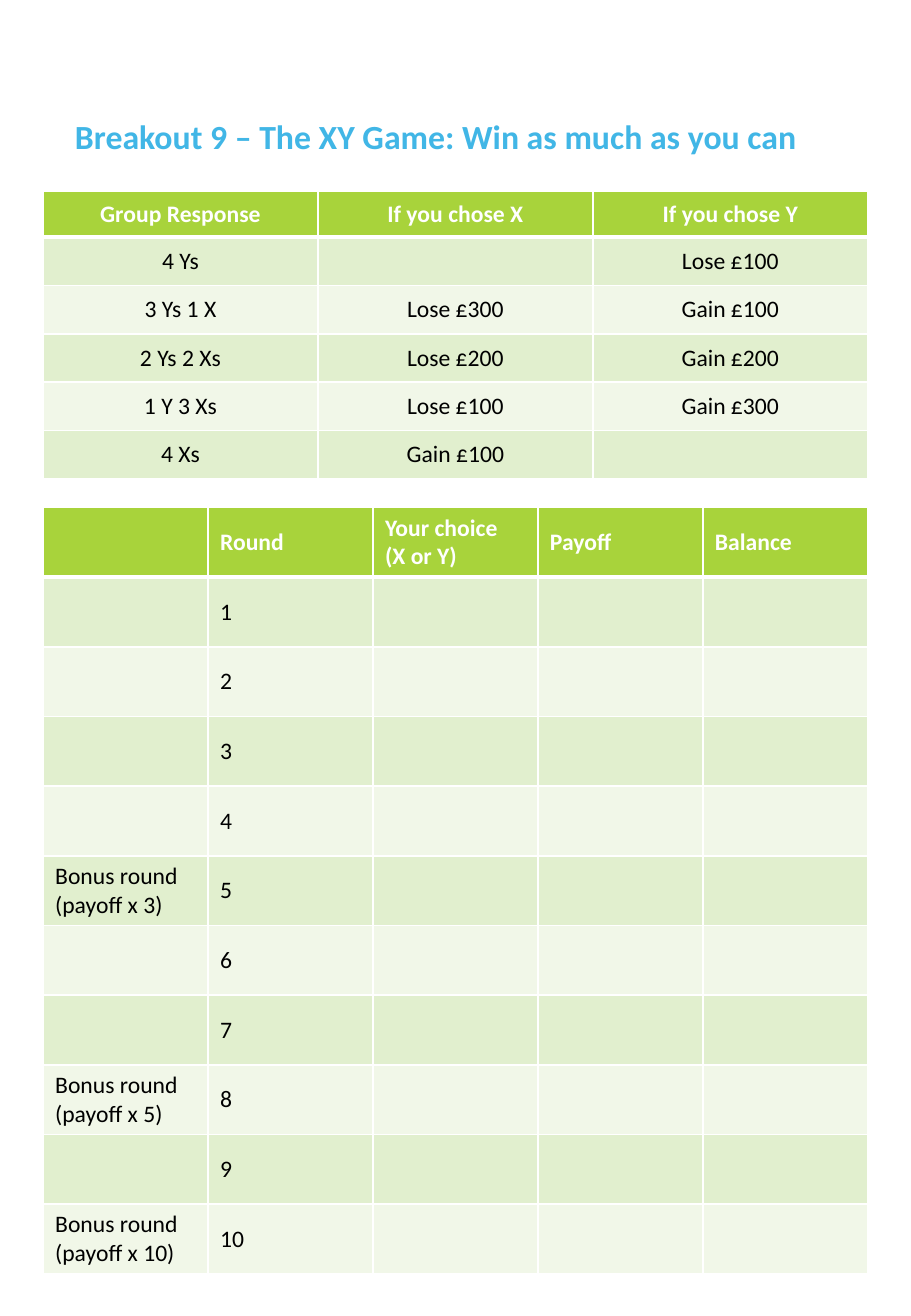
from dataclasses import dataclass

from lxml import etree
from pptx import Presentation
from pptx import util as u
from pptx.dml.color import RGBColor
from pptx.enum import text
from pptx.oxml import ns

LEFT, MID = text.PP_ALIGN.LEFT, text.PP_ALIGN.CENTER


@dataclass(frozen=True)
class Theme:
    font: str = "Calibri"
    title: str = "41B6E6"
    head: str = "A8D33B"
    bands: tuple = ("E1EFCE", "F1F7E8")
    white: str = "FFFFFF"
    ink: str = "000000"
    big: int = 20
    body: int = 14


def write(frame, words, font, size, color, bold=False, align=LEFT, space=1.0):
    lines = words.split("\n")
    for i, line in enumerate(lines):
        para = frame.paragraphs[0] if i == 0 else frame.add_paragraph()
        para.alignment = align
        para.line_spacing = space
        if not line:
            etree.SubElement(para._p, ns.qn("a:endParaRPr"), sz=str(size * 100))
            continue
        run = para.add_run()
        run.text = line
        run.font.name = font
        run.font.size = u.Pt(size)
        run.font.bold = bold
        run.font.color.rgb = RGBColor.from_string(color)


class Page:
    """Draws styled elements on one slide."""

    def __init__(self, slide, theme):
        self.slide = slide
        self.theme = theme

    def title(self, words, x, y, w, h):
        box = self.slide.shapes.add_textbox(u.Pt(x), u.Pt(y), u.Pt(w), u.Pt(h))
        frame = box.text_frame
        frame.word_wrap = True
        frame.vertical_anchor = text.MSO_ANCHOR.MIDDLE
        write(frame, words, self.theme.font, self.theme.big, self.theme.title,
              bold=True, space=0.9)

    def edge(self, cell, side, width):
        line = etree.SubElement(cell._tc.get_or_add_tcPr(), ns.qn("a:ln" + side),
                                w=str(u.Pt(width)))
        fill = etree.SubElement(line, ns.qn("a:solidFill"))
        etree.SubElement(fill, ns.qn("a:srgbClr"), val=self.theme.white)

    def cell(self, cell, words, row, align):
        look = self.theme
        head = row == 0
        for side in "LRTB":
            thick = (row, side) in ((0, "B"), (1, "T"))
            self.edge(cell, side, 3 if thick else 1)
        cell.fill.solid()
        color = look.head if head else look.bands[(row - 1) % 2]
        cell.fill.fore_color.rgb = RGBColor.from_string(color)
        cell.vertical_anchor = text.MSO_ANCHOR.MIDDLE
        write(cell.text_frame, words, look.font, look.body,
              look.white if head else look.ink, bold=head, align=align)

    def table(self, rows, x, y, w, top, step, align=LEFT):
        count = len(rows[0])
        high = top + step * (len(rows) - 1)
        grid = self.slide.shapes.add_table(
            len(rows), count, u.Pt(x), u.Pt(y), u.Pt(w), u.Pt(high)).table
        for col in grid.columns:
            col.width = u.Pt(w / count)
        for r, row in enumerate(rows):
            grid.rows[r].height = u.Pt(step if r else top)
            for c, words in enumerate(row):
                self.cell(grid.cell(r, c), words, r, align)


def main():
    deck = Presentation()
    deck.slide_width, deck.slide_height = u.Pt(540), u.Pt(779.76)
    page = Page(deck.slides.add_slide(deck.slide_layouts[6]), Theme())

    page.title("Breakout 9 – The XY Game: Win as much as you can",
               37.4, 61.2, 465.8, 41.8)

    pay = [
        ("Group Response", "If you chose X", "If you chose Y"),
        ("4 Ys", "", "Lose £100"),
        ("3 Ys 1 X", "Lose £300", "Gain £100"),
        ("2 Ys 2 Xs", "Lose £200", "Gain £200"),
        ("1 Y 3 Xs", "Lose £100", "Gain £300"),
        ("4 Xs", "Gain £100", ""),
    ]
    page.table(pay, 25.5, 113.4, 488.9, 27, 28.7, align=MID)

    bonus = {5: 3, 8: 5, 10: 10}
    score = [("", "Round", "Your choice\n(X or Y)", "Payoff", "Balance")]
    for turn in range(1, 11):
        note = f"Bonus round (payoff x {bonus[turn]})" if turn in bonus else ""
        score.append((note, str(turn), "", "", ""))
    page.table(score, 25.5, 300.6, 488.9, 41.4, 41.3)

    deck.save("out.pptx")


if __name__ == "__main__":
    main()
